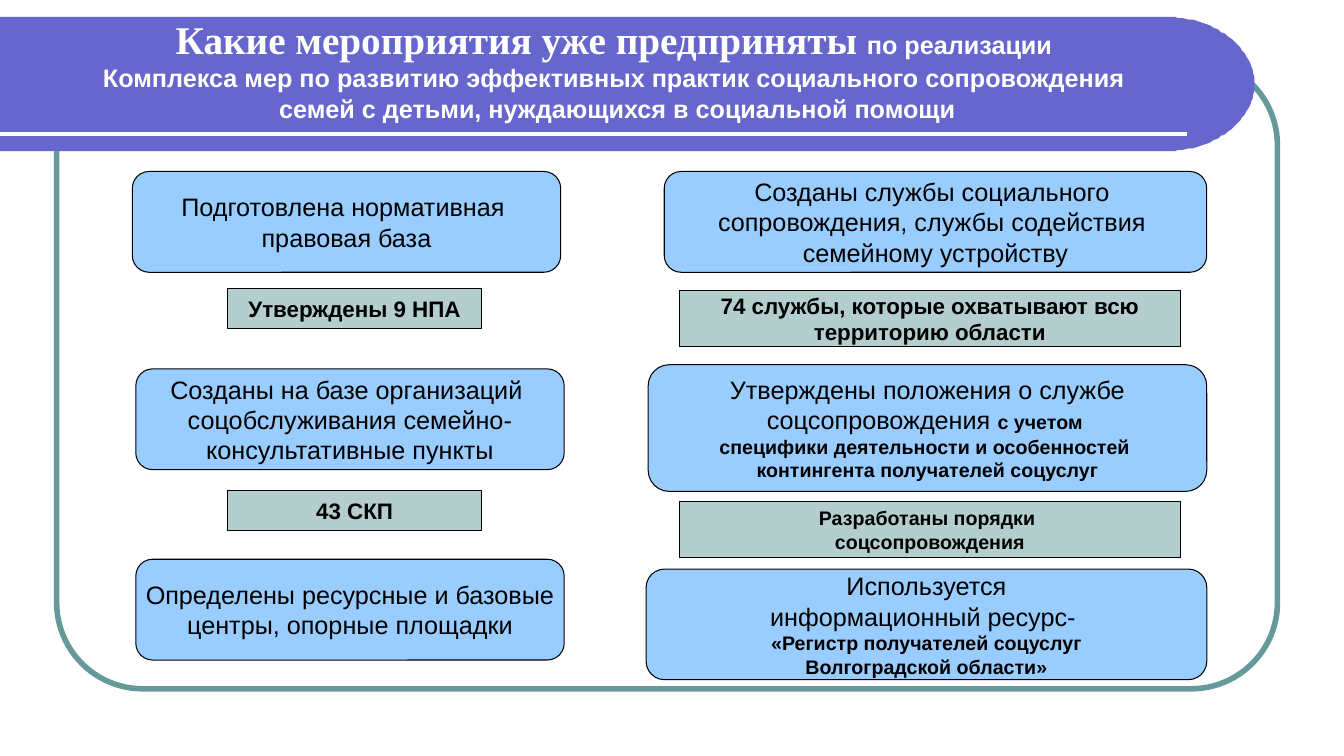
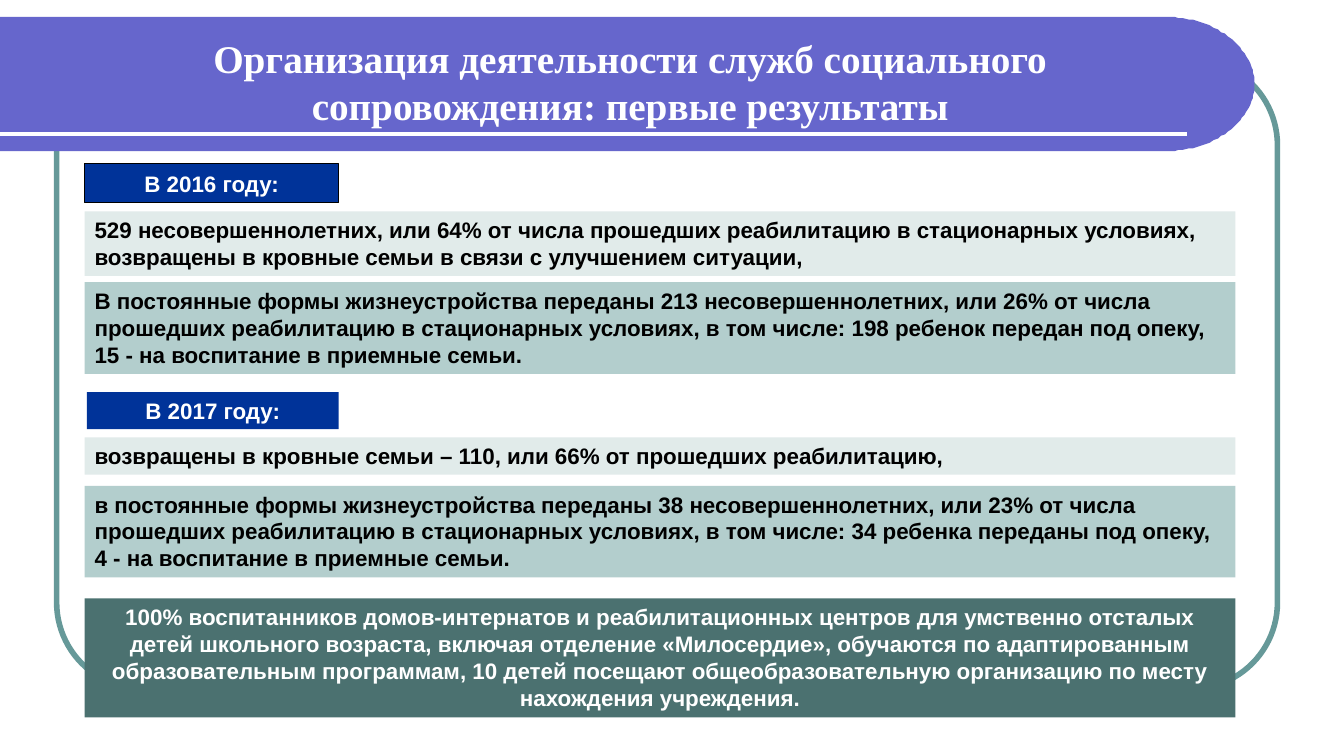
"""Build two slides on social support services: measures taken and first results."""
import math

import pptx
import pptx.dml.color
import pptx.enum.shapes
import pptx.enum.text
import pptx.util
from lxml import etree

Pt = pptx.util.Pt
SHAPE = pptx.enum.shapes.MSO_SHAPE
ALIGN = pptx.enum.text.PP_ALIGN
ANCHOR = pptx.enum.text.MSO_ANCHOR

BLACK, WHITE = "000000", "FFFFFF"
BAND, FRAME, SKY = "6666CC", "669999", "99CCFF"
NAVY, PALE, SAGE, PINE = "003399", "E1EBEA", "B3CECD", "4B7170"
SANS, SERIF = "Arial", "Times New Roman"

BIG = (28, True, SERIF)
LEAD = (18, True, SANS)
PLAIN = (18, False, SANS)
BOLD = (16, True, SANS)
SMALL = (14, True, SANS)

MEASURES_TITLE = [
    [("Какие мероприятия уже предприняты ", BIG), ("по реализации ", LEAD)],
    [("Комплекса мер по развитию эффективных практик социального сопровождения ", LEAD)],
    [("семей с детьми, нуждающихся в социальной помощи", LEAD)],
]
MEASURES = [
    ((94.5, 122.5, 306, 72), [
        [("Подготовлена нормативная ", PLAIN)],
        [("правовая база", PLAIN)]]),
    ((474.5, 122.5, 387.5, 72), [
        [("Созданы службы социального ", PLAIN)],
        [("сопровождения, службы содействия ", PLAIN)],
        [("семейному устройству", PLAIN)]]),
    ((463, 260.5, 399, 90.5), [
        [("Утверждены положения о службе", PLAIN)],
        [("соцсопровождения ", PLAIN), ("с учетом ", SMALL)],
        [("специфики деятельности и особенностей ", SMALL)],
        [("контингента получателей соцуслуг", SMALL)]]),
    ((97, 263.5, 306, 72), [
        [("Созданы на базе организаций ", PLAIN)],
        [("соцобслуживания семейно-", PLAIN)],
        [("консультативные пункты", PLAIN)]]),
    ((461.5, 406.5, 400.5, 79), [
        [("Используется", PLAIN)],
        [("информационный ресурс- ", PLAIN)],
        [("«Регистр получателей соцуслуг", SMALL)],
        [("Волгоградской области»", SMALL)]]),
    ((97, 399.5, 306, 72), [
        [("Определены ресурсные и базовые", PLAIN)],
        [("центры, опорные площадки", PLAIN)]]),
]
OUTCOMES = [
    ((162.5, 206, 181.5, 28.5), [[("Утверждены 9 НПА", BOLD)]]),
    ((162.5, 350.5, 181.5, 28.5), [[("43 СКП", BOLD)]]),
    ((485.5, 207.5, 357.5, 40), [
        [("74 службы, которые охватывают всю", BOLD)],
        [("территорию области", BOLD)]]),
    ((485.5, 358.5, 357.5, 40), [
        [("Разработаны порядки ", SMALL)],
        [("соцсопровождения", SMALL)]]),
]

RESULTS_TITLE = [[
    ("Организация деятельности служб социального сопровождения: первые результаты", BIG)]]
YEARS = [
    ("В 2016 году:", (60.5, 117, 181.5, 28), BLACK),
    ("В 2017 году:", (62, 280, 180, 26.5), None),
]
RESULTS = [
    (151, 46, PALE, BLACK, ALIGN.LEFT,
     "529 несовершеннолетних, или 64% от числа прошедших реабилитацию в стационарных "
     "условиях, возвращены в кровные семьи в связи с улучшением ситуации,"),
    (201.5, 65.5, SAGE, BLACK, ALIGN.LEFT,
     "В постоянные формы жизнеустройства переданы 213 несовершеннолетних, или 26% от числа "
     "прошедших реабилитацию в стационарных условиях, в том числе: 198 ребенок передан под "
     "опеку, 15 - на воспитание в приемные семьи."),
    (312.5, 26.5, PALE, BLACK, ALIGN.LEFT,
     "возвращены в кровные семьи – 110, или 66% от прошедших реабилитацию,"),
    (347, 65.5, SAGE, BLACK, ALIGN.LEFT,
     "в постоянные формы жизнеустройства переданы 38 несовершеннолетних, или 23% от числа "
     "прошедших реабилитацию в стационарных условиях, в том числе: 34 ребенка переданы под "
     "опеку, 4 - на воспитание в приемные семьи."),
    (427.5, 85, PINE, WHITE, ALIGN.CENTER,
     "100% воспитанников домов-интернатов и реабилитационных центров для умственно отсталых "
     "детей школьного возраста, включая отделение «Милосердие», обучаются по адаптированным "
     "образовательным программам, 10 детей посещают общеобразовательную организацию по месту "
     "нахождения учреждения."),
]


def rgb(color):
    return pptx.dml.color.RGBColor.from_string(color)


def paint(sp, fill=None, line=None, width=0.75):
    sp.shadow.inherit = False
    if fill:
        sp.fill.solid()
        sp.fill.fore_color.rgb = rgb(fill)
    else:
        sp.fill.background()
    if line:
        sp.line.color.rgb = rgb(line)
        sp.line.width = Pt(width)
    else:
        sp.line.fill.background()


def write(tf, paragraphs, color, align=ALIGN.CENTER, anchor=ANCHOR.MIDDLE, wrap=True):
    tf.word_wrap = wrap
    tf.auto_size = pptx.enum.text.MSO_AUTO_SIZE.NONE
    tf.vertical_anchor = anchor
    for i, runs in enumerate(paragraphs):
        p = tf.add_paragraph() if i else tf.paragraphs[0]
        p.alignment = align
        for text, (size, bold, face) in runs:
            r = p.add_run()
            r.text = text
            r.font.size = Pt(size)
            r.font.bold = bold
            r.font.name = face
            r.font.color.rgb = rgb(color)


def add_box(s, kind, at, paragraphs, fill, line=None, color=BLACK, **layout):
    sp = s.shapes.add_shape(kind, *map(Pt, at))
    paint(sp, fill, line)
    write(sp.text_frame, paragraphs, color, **layout)


def decorate_layout(layout, s):
    """Draw the frame, title band and rule, and move them into the layout."""
    frame = s.shapes.add_shape(SHAPE.ROUNDED_RECTANGLE, Pt(40.5), Pt(42), Pt(872), Pt(450))
    frame.adjustments[0] = 0.137
    paint(frame, line=FRAME, width=4)

    angles = [math.radians(a) for a in range(-90, 91, 3)]
    arc = [(832 + 64 * math.cos(a), 60 + 48 * math.sin(a)) for a in angles]
    outline = s.shapes.build_freeform(0, 12, scale=float(Pt(1)))
    outline.add_line_segments(arc + [(0, 108)], close=True)
    band = outline.convert_to_shape()
    paint(band, BAND)

    rule = s.shapes.add_connector(
        pptx.enum.shapes.MSO_CONNECTOR.STRAIGHT, Pt(0), Pt(96), Pt(848), Pt(96))
    rule.line.color.rgb = rgb(WHITE)
    rule.line.width = Pt(3)
    props = rule.element.xpath("./p:spPr")[0]
    etree.SubElement(props, pptx.oxml.ns.qn("a:effectLst"))

    for number, sp in enumerate((frame, band, rule), start=20):
        sp.element.xpath(".//p:cNvPr")[0].set("id", str(number))
        layout.shapes.element.append(sp.element)


def add_title(s, at, paragraphs):
    title = s.shapes.title
    title.left, title.top, title.width, title.height = map(Pt, at)
    write(title.text_frame, paragraphs, WHITE)


def build_measures(s):
    add_title(s, (20, 13.5, 842, 72), MEASURES_TITLE)
    for at, paragraphs in MEASURES:
        add_box(s, SHAPE.ROUNDED_RECTANGLE, at, paragraphs, SKY, BLACK, wrap=False)
    for at, paragraphs in OUTCOMES:
        add_box(s, SHAPE.RECTANGLE, at, paragraphs, SAGE, BLACK, wrap=False)


def build_results(s):
    add_title(s, (134, 26, 632, 64), RESULTS_TITLE)
    for top, height, fill, color, align, text in RESULTS:
        add_box(s, SHAPE.RECTANGLE, (60.5, top, 822, height), [[(text, BOLD)]], fill,
                color=color, align=align, anchor=ANCHOR.TOP)
    for text, at, line in YEARS:
        add_box(s, SHAPE.RECTANGLE, at, [[(text, BOLD)]], NAVY, line, WHITE)


def main():
    prs = pptx.Presentation()
    prs.slide_width, prs.slide_height = Pt(960), Pt(540)
    layout = prs.slide_layouts.get_by_name("Title Only")
    measures, results = (prs.slides.add_slide(layout) for _ in range(2))
    decorate_layout(layout, measures)
    build_measures(measures)
    build_results(results)
    prs.save("out.pptx")


if __name__ == "__main__":
    main()
